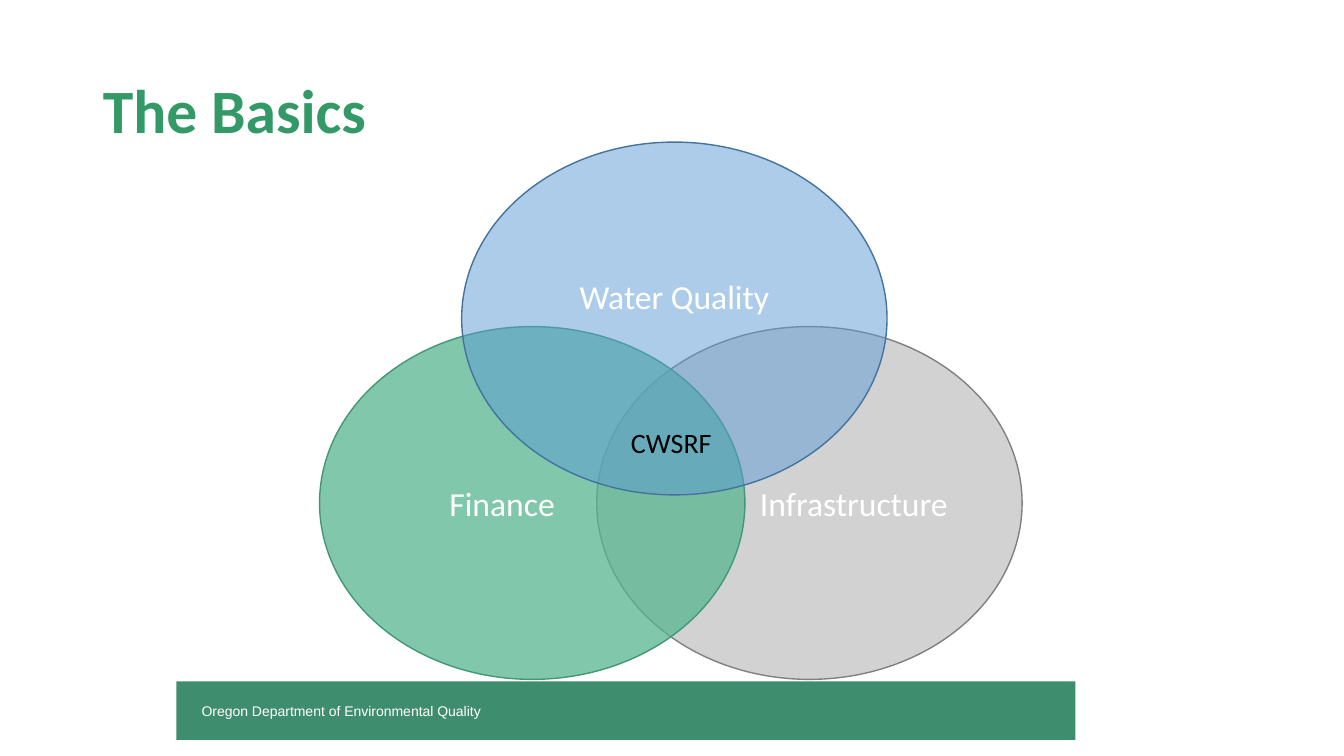
from dataclasses import dataclass

from lxml import etree
from pptx import Presentation
from pptx.dml.color import RGBColor
from pptx.enum import shapes, text
from pptx.oxml.ns import qn
from pptx.util import Pt

ELLIPSE_WIDTH, ELLIPSE_HEIGHT = 303.84, 252
LOWER_TOP = 233.28
WHITE = "FFFFFF"


@dataclass
class Circle:
    label: str
    left: float
    top: float
    fill: str
    opacity: int  # percent
    line: str
    align: text.PP_ALIGN = text.PP_ALIGN.CENTER
    inset_left: float = 7.2
    inset_bottom: float = 3.6


CIRCLES = [
    Circle("Infrastructure", 426.24, LOWER_TOP, "A6A6A6", 50, "808080", inset_left=70.56),
    Circle("Finance", 228.24, LOWER_TOP, "57B591", 75, "439777",
           align=text.PP_ALIGN.LEFT, inset_left=48.24),
    Circle("Water Quality", 329.76, 101.52, "5B9BD5", 50, "43739E", inset_bottom=36),
]


def color(value: str) -> RGBColor:
    return RGBColor.from_string(value)


def write(shape, content: str, size: float, hue: str, font: str = "Calibri",
          align: text.PP_ALIGN = text.PP_ALIGN.LEFT, bold: bool = False):
    """Put one formatted paragraph into a shape and return it."""
    frame = shape.text_frame
    frame.text = content
    frame.vertical_anchor = text.MSO_ANCHOR.MIDDLE
    para = frame.paragraphs[0]
    para.alignment = align
    para.font.name, para.font.size, para.font.bold = font, Pt(size), bold
    para.font.color.rgb = color(hue)
    return para


def add_filled(page, kind: shapes.MSO_SHAPE, left: float, top: float,
               width: float, height: float, fill: str):
    shape = page.shapes.add_shape(kind, Pt(left), Pt(top), Pt(width), Pt(height))
    shape.shadow.inherit = False
    shape.fill.solid()
    shape.fill.fore_color.rgb = color(fill)
    return shape


def add_circle(page, circle: Circle) -> None:
    shape = add_filled(page, shapes.MSO_SHAPE.OVAL, circle.left, circle.top,
                       ELLIPSE_WIDTH, ELLIPSE_HEIGHT, circle.fill)
    fill_color = shape.fill._xPr.find(qn("a:solidFill"))[0]
    etree.SubElement(fill_color, qn("a:alpha"), val=str(circle.opacity * 1000))
    shape.line.color.rgb = color(circle.line)
    shape.line.width = Pt(1)
    write(shape, circle.label, 24, WHITE, align=circle.align)
    shape.text_frame.margin_left = Pt(circle.inset_left)
    shape.text_frame.margin_bottom = Pt(circle.inset_bottom)


def main() -> None:
    deck = Presentation()
    deck.slide_width, deck.slide_height = Pt(960), Pt(540)
    page = deck.slides.add_slide(deck.slide_layouts[5])

    # Title
    title = page.shapes.title
    title.left, title.top, title.width, title.height = Pt(66.24), Pt(28.8), Pt(828), Pt(104.4)
    write(title, "The Basics", 44, "339966", bold=True).line_spacing = 0.9
    title.text_frame.auto_size = text.MSO_AUTO_SIZE.NONE

    # Overlapping circles and their shared centre
    for circle in CIRCLES:
        add_circle(page, circle)
    centre = page.shapes.add_textbox(Pt(443.52), Pt(300.24), Pt(72.72), Pt(31.68))
    write(centre, "CWSRF", 20, "000000")
    centre.text_frame.word_wrap = False

    # Footer bar
    footer = add_filled(page, shapes.MSO_SHAPE.RECTANGLE, 126, 486.72, 642.24, 41.76, "3F8D6F")
    footer.line.fill.background()
    write(footer, "Oregon Department of Environmental Quality", 10, WHITE, font="Arial")
    footer.text_frame.margin_left = Pt(18)

    deck.save("out.pptx")


if __name__ == "__main__":
    main()
